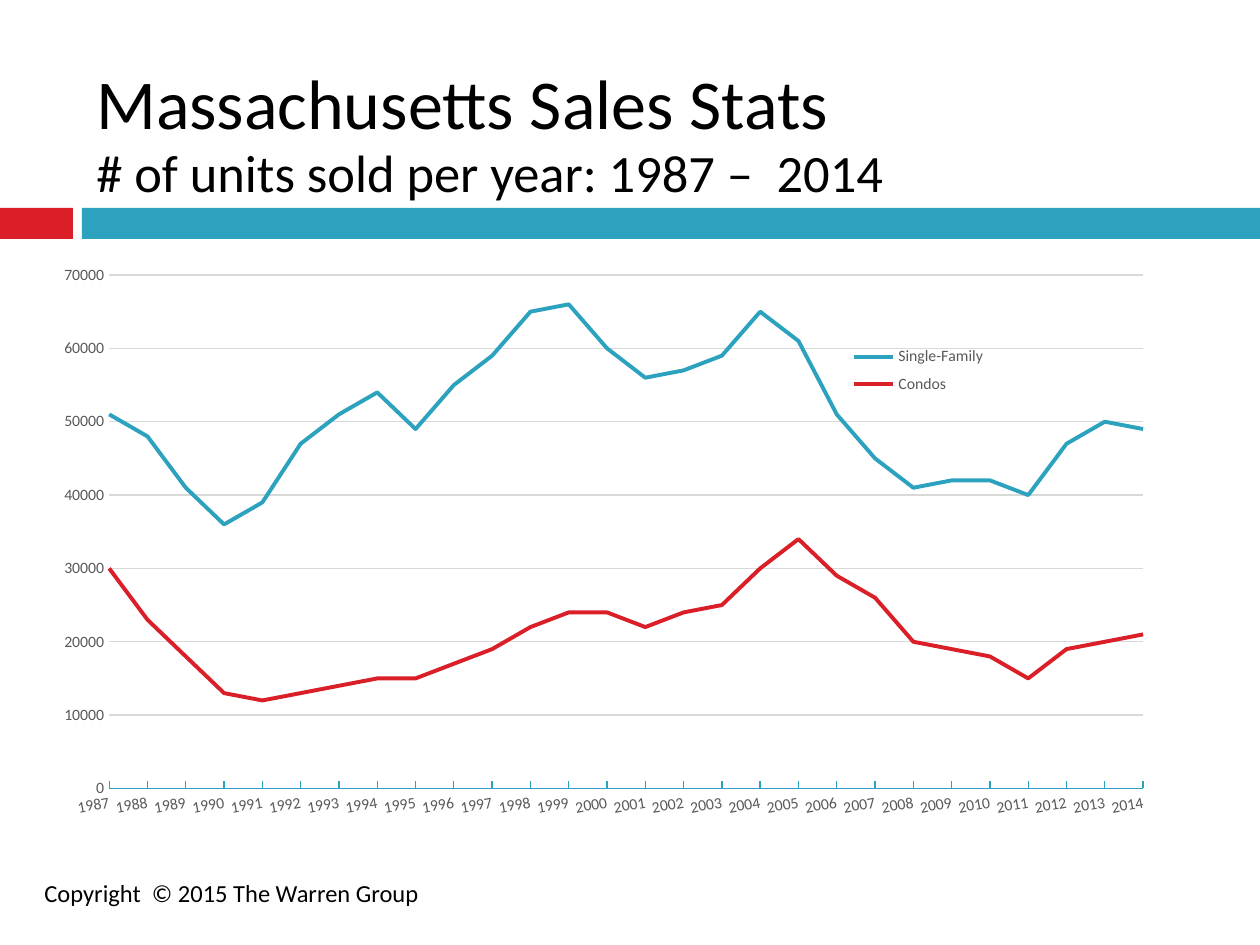
import dataclasses
import typing

import lxml.etree
import pptx
import pptx.chart.data
import pptx.dml.color
import pptx.enum.chart
import pptx.enum.shapes
import pptx.enum.text
import pptx.oxml
import pptx.oxml.ns
import pptx.util

EMU_PER_PX = 914400 / 126
COLORS = {
    "teal": "2DA2BF",
    "red": "DA1F28",
    "black": "000000",
    "label": "595959",
    "grid": "D9D9D9",
}
FONT = "Calibri"


@dataclasses.dataclass
class Box:
    left: int
    top: int
    width: int
    height: int

    def emu(self) -> list[int]:
        return [round(v * EMU_PER_PX) for v in dataclasses.astuple(self)]


@dataclasses.dataclass
class Band:
    box: Box
    color: str


@dataclasses.dataclass
class Line:
    text: str
    size: int


@dataclasses.dataclass
class TextBlock:
    box: Box
    lines: list[Line]
    frame_format: dict[str, typing.Any]
    line_spacing: float


@dataclasses.dataclass
class Series:
    name: str
    color: str
    thousands: list[int]


BANDS = [
    Band(Box(0, 208, 73, 31), "red"),
    Band(Box(82, 208, 1178, 31), "teal"),
]
TEXTS = [
    TextBlock(
        Box(84, 21, 1124, 186),
        [Line("Massachusetts Sales Stats ", 40),
         Line("# of units sold per year: 1987 –  2014", 30)],
        {"vertical_anchor": pptx.enum.text.MSO_ANCHOR.BOTTOM,
         "margin_bottom": round(2 * EMU_PER_PX)},
        0.95,
    ),
    TextBlock(
        Box(32, 872, 504, 43),
        [Line("Copyright  © 2015 The Warren Group", 14)],
        {"auto_size": pptx.enum.text.MSO_AUTO_SIZE.SHAPE_TO_FIT_TEXT},
        1.0,
    ),
]
CHART_BOX = Box(53, 252, 1124, 577)
YEARS = [str(year) for year in range(1987, 2015)]
SALES = [
    Series("Single-Family", "teal",
           [51, 48, 41, 36, 39, 47, 51, 54, 49, 55, 59, 65, 66, 60,
            56, 57, 59, 65, 61, 51, 45, 41, 42, 42, 40, 47, 50, 49]),
    Series("Condos", "red",
           [30, 23, 18, 13, 12, 13, 14, 15, 15, 17, 19, 22, 24, 24,
            22, 24, 25, 30, 34, 29, 26, 20, 19, 18, 15, 19, 20, 21]),
]


def rgb(color: str) -> pptx.dml.color.RGBColor:
    return pptx.dml.color.RGBColor.from_string(COLORS[color])


def set_font(font, size: int, color: str) -> None:
    for name, value in {"name": FONT, "size": pptx.util.Pt(size)}.items():
        setattr(font, name, value)
    font.color.rgb = rgb(color)


def set_line(line, color: str, width: float) -> None:
    line.color.rgb = rgb(color)
    line.width = pptx.util.Pt(width)


def draw_band(slide, band: Band) -> None:
    bar = slide.shapes.add_shape(
        pptx.enum.shapes.MSO_SHAPE.RECTANGLE, *band.box.emu())
    bar.shadow.inherit = False
    bar.fill.solid()
    bar.fill.fore_color.rgb = rgb(band.color)
    bar.line.fill.background()


def draw_text(slide, block: TextBlock) -> None:
    frame = slide.shapes.add_textbox(*block.box.emu()).text_frame
    frame.word_wrap = True
    for name, value in block.frame_format.items():
        setattr(frame, name, value)
    paragraph = frame.paragraphs[0]
    paragraph.line_spacing = block.line_spacing
    for index, line in enumerate(block.lines):
        if index:
            paragraph.add_line_break()
        run = paragraph.add_run()
        run.text = line.text
        set_font(run.font, line.size, "black")


def place(element, fractions: dict[str, float], inner: bool = False) -> None:
    for old in element.findall(pptx.oxml.ns.qn("c:layout")):
        element.remove(old)
    target = '<c:layoutTarget val="inner"/>' if inner else ""
    sizes = "".join(f'<c:{k} val="{v}"/>' for k, v in fractions.items())
    layout = pptx.oxml.parse_xml(
        f'<c:layout {pptx.oxml.ns.nsdecls("c")}><c:manualLayout>{target}'
        f'<c:xMode val="edge"/><c:yMode val="edge"/>{sizes}'
        '</c:manualLayout></c:layout>')
    element.insert(0 if inner else 1, layout)


def draw_sales_chart(slide) -> None:
    data = pptx.chart.data.CategoryChartData()
    data.categories = YEARS
    for sales in SALES:
        data.add_series(sales.name, [v * 1000 for v in sales.thousands])
    chart = slide.shapes.add_chart(
        pptx.enum.chart.XL_CHART_TYPE.LINE, *CHART_BOX.emu(), data).chart
    chart.has_title = False
    set_font(chart.font, 10, "black")

    plot = chart.plots[0]
    plot.vary_by_categories = False
    for series, sales in zip(plot.series, SALES):
        series.smooth = False
        series.marker.style = pptx.enum.chart.XL_MARKER_STYLE.NONE
        set_line(series.format.line, sales.color, 2.25)

    ticks = pptx.enum.chart.XL_TICK_MARK
    years, units = chart.category_axis, chart.value_axis
    axis_formats = {
        years: {"major_tick_mark": ticks.INSIDE, "has_major_gridlines": False},
        units: {"major_tick_mark": ticks.NONE, "has_major_gridlines": True,
                "minimum_scale": 0, "maximum_scale": 70000,
                "major_unit": 10000},
    }
    for axis, formats in axis_formats.items():
        for name, value in formats.items():
            setattr(axis, name, value)
        axis.minor_tick_mark = ticks.NONE
        set_font(axis.tick_labels.font, 9, "label")
    set_line(years.format.line, "teal", 0.75)
    units.format.line.fill.background()
    set_line(units.major_gridlines.format.line, "grid", 0.75)

    chart_xml = chart.element
    ns = pptx.oxml.ns.qn
    label_body = chart_xml.find(f".//{ns('c:catAx')}/{ns('c:txPr')}/{ns('a:bodyPr')}")
    label_body.set("rot", "-600000")
    crossing = chart_xml.find(f".//{ns('c:valAx')}/{ns('c:crossBetween')}")
    if crossing is None:
        crossing = lxml.etree.Element(ns("c:crossBetween"))
        chart_xml.find(f".//{ns('c:valAx')}/{ns('c:crosses')}").addnext(crossing)
    crossing.set("val", "midCat")

    chart.has_legend = True
    legend = chart.legend
    legend.position = pptx.enum.chart.XL_LEGEND_POSITION.BOTTOM
    legend.include_in_layout = False
    set_font(legend.font, 9, "label")
    place(chart_xml.find(f".//{ns('c:legend')}"),
          {"x": 0.7, "y": 0.15, "w": 0.14, "h": 0.11})
    place(chart_xml.find(f".//{ns('c:plotArea')}"),
          {"x": 0.05, "y": 0.04, "w": 0.92, "h": 0.89}, inner=True)


def main() -> None:
    deck = pptx.Presentation()
    deck.slide_width, deck.slide_height = Box(0, 0, 1260, 945).emu()[2:]
    slide = deck.slides.add_slide(deck.slide_layouts[6])
    for band in BANDS:
        draw_band(slide, band)
    for block in TEXTS:
        draw_text(slide, block)
    draw_sales_chart(slide)
    deck.save("out.pptx")


if __name__ == "__main__":
    main()
